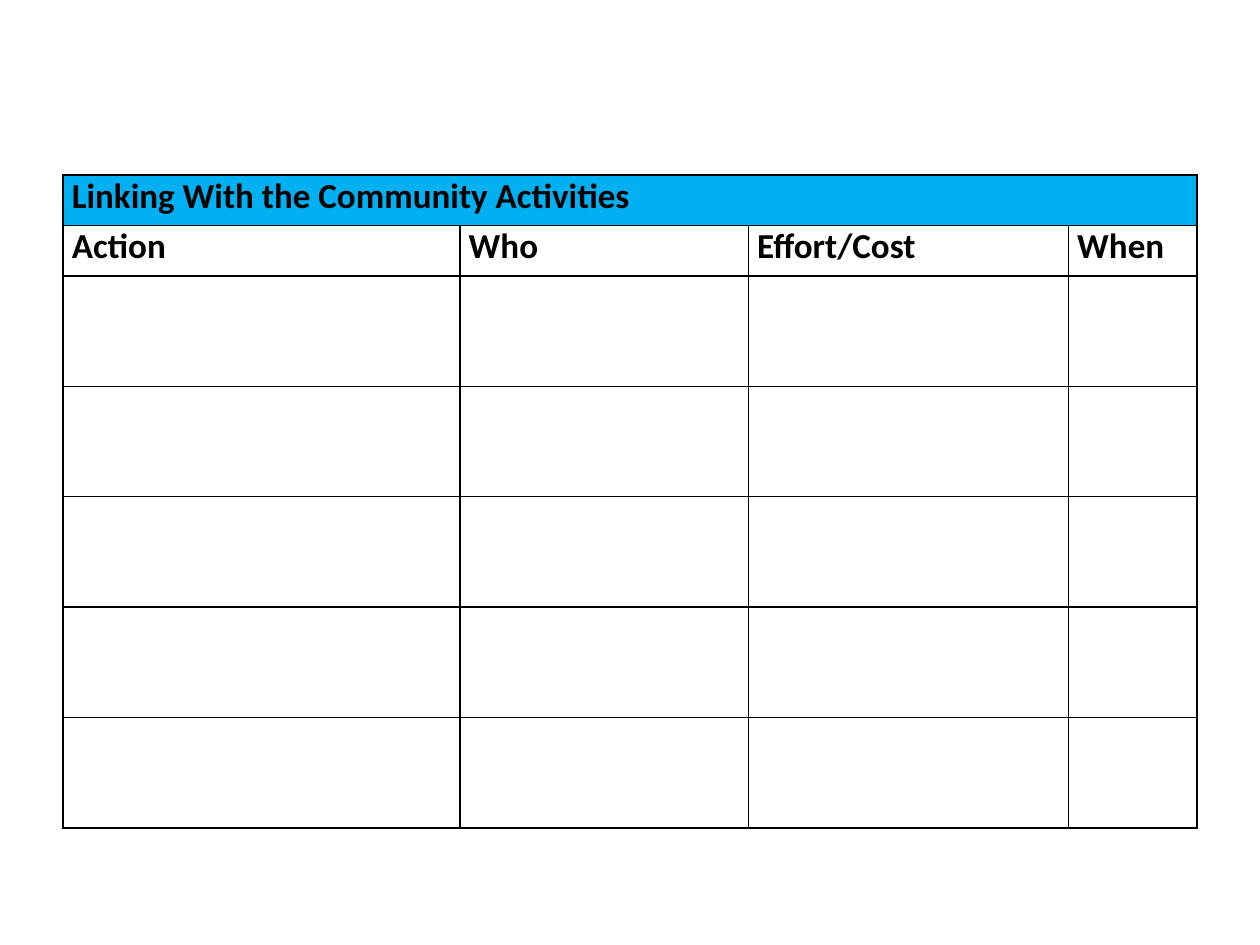
import pptx
import pptx.dml.color
import pptx.oxml.ns
import pptx.util
from lxml import etree
from pptx.util import Inches

COLORS = {"banner": "00B0F0", "text": "000000", "border": "000000"}
HEADING_FONT = {"name": "Calibri", "size": pptx.util.Pt(20), "bold": True}
CELL_MARGINS = {
    "margin_left": Inches(0.07),
    "margin_right": Inches(0.07),
    "margin_top": 0,
    "margin_bottom": 0,
}

BANNER = "Linking With the Community Activities"
HEADINGS = ["Action", "Who", "Effort/Cost", "When"]
COLUMN_SHARES = [3.15, 2.29, 2.54, 1.02]
HEADING_HEIGHT = 0.4
BLANK_ROWS = 5


def apply_format(target, values):
    for attribute, value in values.items():
        setattr(target, attribute, value)


def rgb(name):
    return pptx.dml.color.RGBColor.from_string(COLORS[name])


def add_borders(cell):
    properties = cell._tc.get_or_add_tcPr()
    qn = pptx.oxml.ns.qn
    for side in ("a:lnL", "a:lnR", "a:lnT", "a:lnB"):
        line = etree.SubElement(properties, qn(side), w=str(pptx.util.Pt(1)))
        fill = etree.SubElement(line, qn("a:solidFill"))
        etree.SubElement(fill, qn("a:srgbClr"), val=COLORS["border"])


def write_heading(cell, text):
    paragraph = cell.text_frame.paragraphs[0]
    run = paragraph.add_run()
    run.text = text
    apply_format(run.font, HEADING_FONT)
    run.font.color.rgb = rgb("text")


def add_action_plan(slide, left, top, width, height):
    row_count = 2 + BLANK_ROWS
    plan = slide.shapes.add_table(
        row_count, len(HEADINGS),
        Inches(left), Inches(top), Inches(width), Inches(height),
    ).table
    apply_format(plan, {"first_row": False, "horz_banding": False})

    # Column widths and row heights fill the box
    for column, share in zip(plan.columns, COLUMN_SHARES):
        column.width = Inches(width * share / sum(COLUMN_SHARES))
    blank_height = (height - 2 * HEADING_HEIGHT) / BLANK_ROWS
    for index, row in enumerate(plan.rows):
        row.height = Inches(HEADING_HEIGHT if index < 2 else blank_height)

    # Plain ruled cells
    for cell in plan.iter_cells():
        add_borders(cell)
        cell.fill.background()
        apply_format(cell, CELL_MARGINS)

    # Banner across all columns
    banner = plan.cell(0, 0)
    banner.merge(plan.cell(0, len(HEADINGS) - 1))
    banner.fill.solid()
    banner.fill.fore_color.rgb = rgb("banner")
    write_heading(banner, BANNER)

    # Column headings
    for index, heading in enumerate(HEADINGS):
        write_heading(plan.cell(1, index), heading)


def main():
    presentation = pptx.Presentation()
    presentation.slide_width = Inches(10)
    presentation.slide_height = Inches(7.5)
    slide = presentation.slides.add_slide(presentation.slide_layouts[6])
    add_action_plan(slide, 0.5, 1.39, 9, 5.18)
    presentation.save("out.pptx")


if __name__ == "__main__":
    main()
